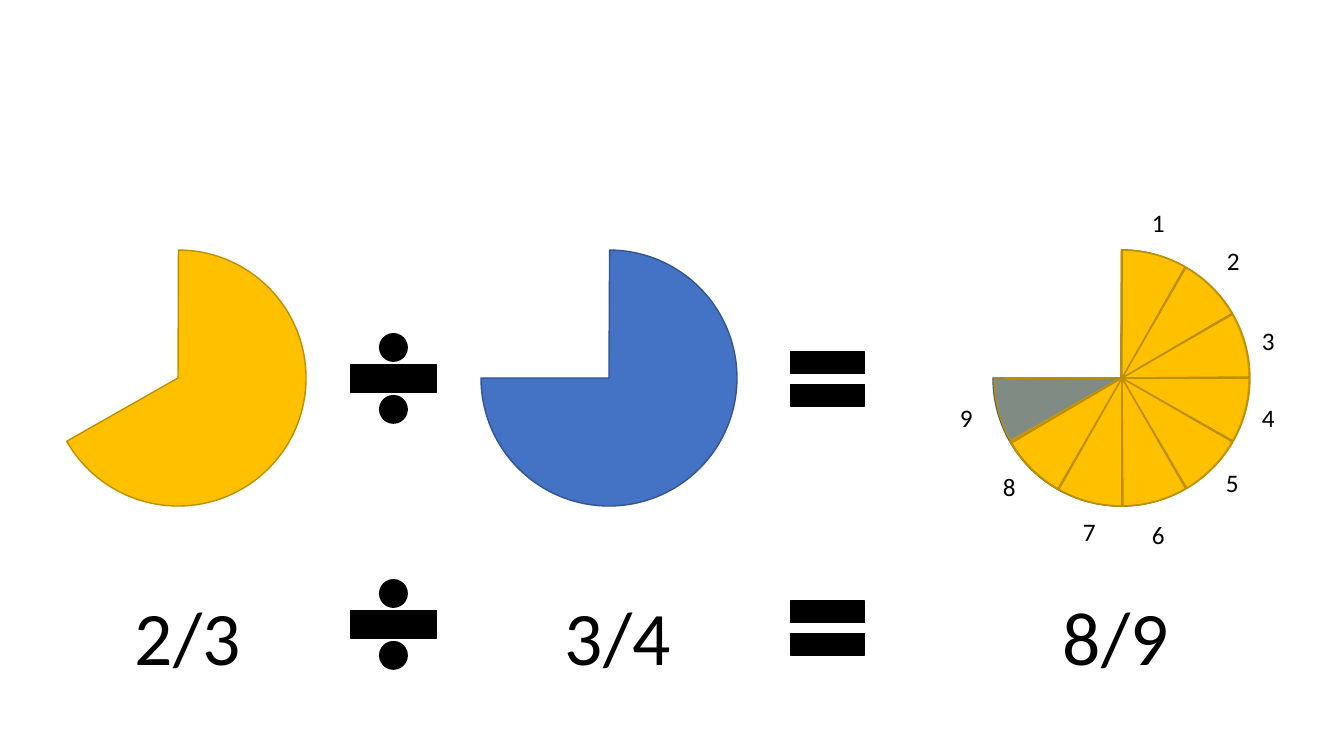
from lxml.etree import SubElement
from pptx import Presentation
from pptx.dml.color import RGBColor
from pptx.enum.shapes import MSO_SHAPE
from pptx.enum.text import MSO_AUTO_SIZE
from pptx.oxml.ns import qn
from pptx.util import Emu, Pt

BLUE = RGBColor(0x44, 0x72, 0xC4)
BLUE_EDGE = RGBColor(0x32, 0x54, 0x91)
GOLD = RGBColor(0xFF, 0xC0, 0x00)
GOLD_EDGE = RGBColor(0xBD, 0x8E, 0x00)
BLACK = RGBColor(0, 0, 0)

PIE_TOP, PIE_SIZE = 250, 256
DIVIDEND_LEFT, DIVISOR_LEFT, RESULT_LEFT = 50, 481, 993
THREE_QUARTERS = dict(start=270.28, end=180, fill=BLUE, edge=BLUE_EDGE)
TWO_THIRDS = dict(start=131.99, end=12.21, rot=138.2, fill=GOLD, edge=GOLD_EDGE)
SLICE = dict(start=116.58, end=146.03, fill=GOLD, edge=GOLD_EDGE, alpha=32)
SLICE_COUNT, FIRST_ROT, SLICE_STEP = 9, 33.5, 30
SYMBOLS = [
    (MSO_SHAPE.MATH_DIVIDE, 335, (320, 566), 117, 117),
    (MSO_SHAPE.MATH_EQUAL, 777, (333, 582), 101, 92),
]
COUNT_POSITIONS = [
    (1142, 202), (1217, 240), (1252, 320), (1252, 397), (1216, 462),
    (1142, 514), (1073, 511), (993, 466), (950, 397),
]
FRACTIONS = [("2/3", 125), ("3/4", 555), ("8/9", 1053)]
FRACTION_TOP = 585
COUNT_FONT = dict(name="Calibri", size=Pt(18))
FRACTION_FONT = dict(name="Calibri", size=Pt(54))
FRAME = dict(word_wrap=False, auto_size=MSO_AUTO_SIZE.SHAPE_TO_FIT_TEXT)


def px(*values):
    return [Emu(round(v * 914400 / 100.8)) for v in values]


def add_shape(shapes, kind, box, fill, edge):
    sp = shapes.add_shape(kind, *px(*box))
    sp.shadow.inherit = False
    sp.fill.solid()
    sp.fill.fore_color.rgb = fill
    sp.line.color.rgb = edge
    sp.line.width = Pt(1)
    return sp


def add_pie(shapes, left, start, end, fill, edge, rot=0, alpha=None):
    box = (left, PIE_TOP, PIE_SIZE, PIE_SIZE)
    sp = add_shape(shapes, MSO_SHAPE.PIE, box, fill, edge)
    sp.adjustments[0] = start * 0.6
    sp.adjustments[1] = end * 0.6
    sp.rotation = rot
    if alpha:
        color = sp._element.spPr.find(qn("a:solidFill"))[0]
        SubElement(color, qn("a:alpha"), val=str(alpha * 1000))


def add_text(shapes, text, box, font):
    tf = shapes.add_textbox(*px(*box)).text_frame
    for name, value in FRAME.items():
        setattr(tf, name, value)
    r = tf.paragraphs[0].add_run()
    r.text = text
    for name, value in font.items():
        setattr(r.font, name, value)
    r.font.color.rgb = BLACK


def main():
    prs = Presentation()
    prs.slide_width, prs.slide_height = px(1344, 756)
    s = prs.slides.add_slide(prs.slide_layouts[6])

    add_pie(s.shapes, DIVISOR_LEFT, **THREE_QUARTERS)
    add_pie(s.shapes, DIVIDEND_LEFT, **TWO_THIRDS)

    result = s.shapes.add_group_shape().shapes
    add_pie(result, RESULT_LEFT, **THREE_QUARTERS)
    add_pie(result, RESULT_LEFT, **TWO_THIRDS)
    for i in range(SLICE_COUNT):
        rot = (FIRST_ROT - i * SLICE_STEP) % 360
        add_pie(result, RESULT_LEFT + 1, rot=rot, **SLICE)
    for number, (left, top) in enumerate(COUNT_POSITIONS, 1):
        add_text(result, str(number), (left, top, 33, 40), COUNT_FONT)

    for text, left in FRACTIONS:
        add_text(s.shapes, text, (left, FRACTION_TOP, 127, 102), FRACTION_FONT)
    for kind, left, tops, width, height in SYMBOLS:
        for top in tops:
            add_shape(s.shapes, kind, (left, top, width, height), BLACK, BLACK)

    prs.save("out.pptx")


if __name__ == "__main__":
    main()
